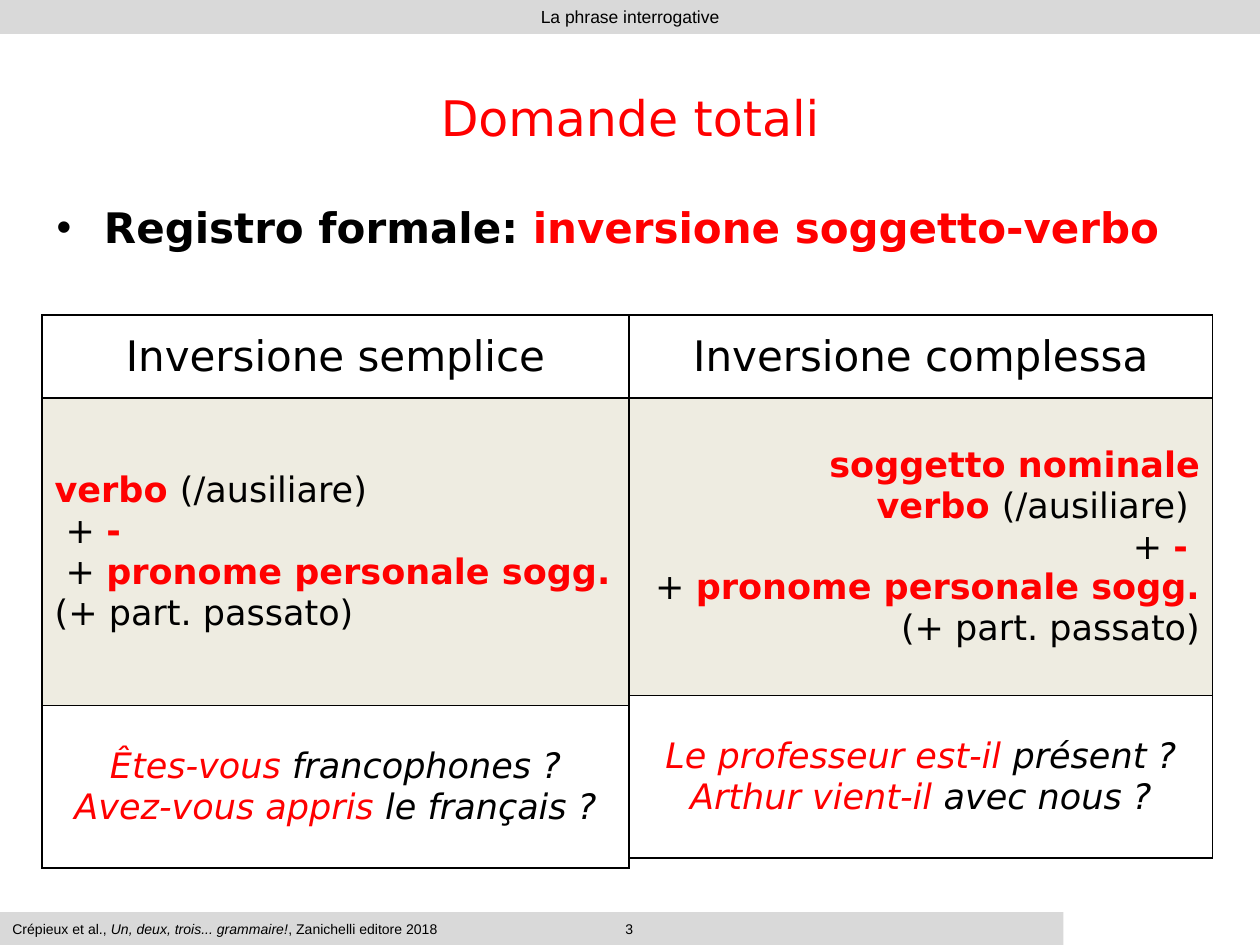
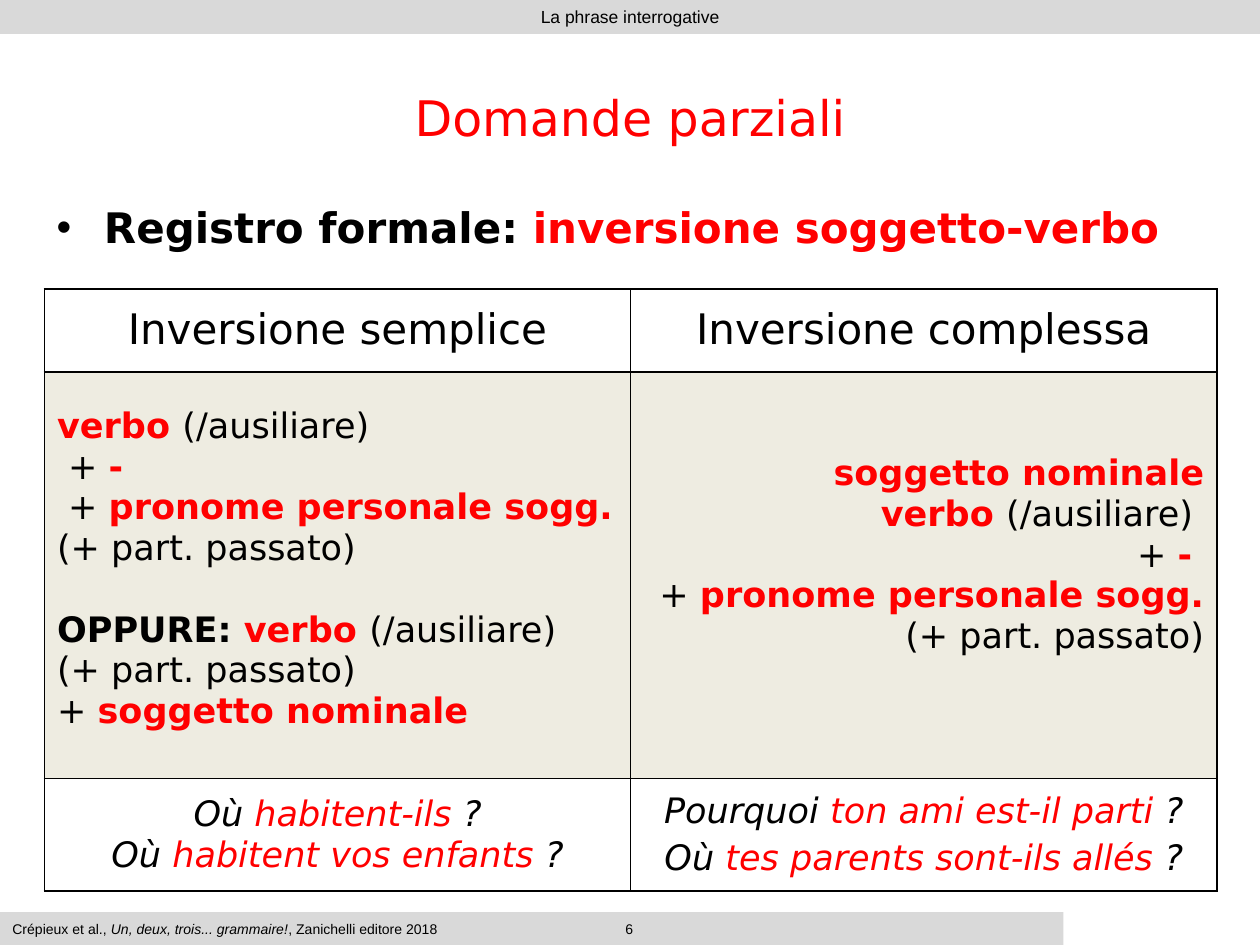
from dataclasses import dataclass
from typing import NamedTuple

from lxml.etree import SubElement
from pptx import Presentation
from pptx.dml.color import RGBColor
from pptx.enum.shapes import MSO_SHAPE
from pptx.enum.text import MSO_ANCHOR, MSO_AUTO_SIZE, PP_ALIGN
from pptx.oxml.ns import qn
from pptx.util import Pt

RED, BLACK, GREY, CREAM = "FF0000", "000000", "D9D9D9", "EEECE1"
SANS, BAND_FONT = "DejaVu Sans", "Arial"
LEFT, CENTER, RIGHT = PP_ALIGN.LEFT, PP_ALIGN.CENTER, PP_ALIGN.RIGHT
BLANK_LINE = 23.3


class Run(NamedTuple):
    text: str
    color: str | None = None
    bold: bool | None = None
    italic: bool | None = None


@dataclass
class Para:
    runs: list[Run]
    size: float
    align: PP_ALIGN = LEFT
    font: str = SANS
    color: str = BLACK
    bold: bool = False
    italic: bool = False
    before: float = 0


@dataclass
class Cell:
    paras: list[Para]
    fill: str | None = None
    anchor: MSO_ANCHOR = MSO_ANCHOR.MIDDLE
    space_below: float = 0


@dataclass
class Band:
    left: float
    top: float
    width: float
    height: float
    para: Para


@dataclass
class Grid:
    """A one-column table."""
    left: float
    top: float
    width: float
    heights: list[float]
    cells: list[Cell]


@dataclass
class Lesson:
    title: str
    number: str
    grids: list[Grid]


def rgb(color: str) -> RGBColor:
    return RGBColor.from_string(color)


def key(text: str) -> Run:
    return Run(text, RED, bold=True)


def red(text: str) -> Run:
    return Run(text, RED)


def header(text: str) -> Cell:
    return Cell([Para([Run(text)], 24, CENTER)])


def example(*runs: Run, before: float = 0) -> Para:
    return Para(list(runs), 20, CENTER, italic=True, before=before)


def fill_paragraph(p, para: Para) -> None:
    p.alignment = para.align
    p.space_before = Pt(para.before)
    f = p.font
    f.name, f.size = para.font, Pt(para.size)
    f.bold, f.italic = para.bold, para.italic
    f.color.rgb = rgb(para.color)
    for run in para.runs:
        for i, line in enumerate(run.text.split("\n")):
            if i:
                p.add_line_break()
            if not line:
                continue
            r = p.add_run()
            r.text = line
            if run.color:
                r.font.color.rgb = rgb(run.color)
            if run.bold is not None:
                r.font.bold = run.bold
            if run.italic is not None:
                r.font.italic = run.italic


def fill_frame(tf, paras: list[Para]) -> None:
    for i, para in enumerate(paras):
        fill_paragraph(tf.add_paragraph() if i else tf.paragraphs[0], para)


def place(sp, left: float, top: float, width: float, height: float) -> None:
    sp.left, sp.top, sp.width, sp.height = map(Pt, (left, top, width, height))


def draw_band(s, band: Band) -> None:
    sp = s.shapes.add_shape(MSO_SHAPE.RECTANGLE, Pt(band.left), Pt(band.top),
                            Pt(band.width), Pt(band.height))
    sp.shadow.inherit = False
    sp.fill.solid()
    sp.fill.fore_color.rgb = rgb(GREY)
    sp.line.fill.background()
    tf = sp.text_frame
    tf.word_wrap = True
    tf.margin_top = tf.margin_bottom = 0
    tf.vertical_anchor = MSO_ANCHOR.MIDDLE
    fill_frame(tf, [band.para])


def add_borders(cell) -> None:
    tc_pr = cell._tc.get_or_add_tcPr()
    for side in ("lnL", "lnR", "lnT", "lnB"):
        ln = SubElement(tc_pr, qn(f"a:{side}"), w=str(Pt(1)))
        solid = SubElement(ln, qn("a:solidFill"))
        SubElement(solid, qn("a:srgbClr"), val=BLACK)


def draw_grid(s, grid: Grid) -> None:
    table = s.shapes.add_table(len(grid.cells), 1, Pt(grid.left), Pt(grid.top),
                               Pt(grid.width), Pt(sum(grid.heights))).table
    table.first_row = table.horz_banding = False
    for row, height, content in zip(table.rows, grid.heights, grid.cells):
        row.height = Pt(height)
        cell = row.cells[0]
        add_borders(cell)
        if content.fill:
            cell.fill.solid()
            cell.fill.fore_color.rgb = rgb(content.fill)
        else:
            cell.fill.background()
        cell.vertical_anchor = content.anchor
        cell.margin_bottom = Pt(3.6 + content.space_below)
        fill_frame(cell.text_frame, content.paras)


def draw_lesson(prs, lesson: Lesson) -> None:
    s = prs.slides.add_slide(prs.slide_layouts[1])
    title, body = s.placeholders
    place(title, 36, 21.6, 648, 90)
    title.text_frame.vertical_anchor = MSO_ANCHOR.MIDDLE
    fill_frame(title.text_frame,
               [Para([Run(lesson.title)], 28, CENTER, color=RED)])

    place(body, 25.2, 111.6, 686.2, 385.2)
    tf = body.text_frame
    tf.auto_size = MSO_AUTO_SIZE.NONE
    p_pr = tf.paragraphs[0]._p.get_or_add_pPr()
    p_pr.set("marL", str(Pt(27)))
    p_pr.set("indent", str(-Pt(27)))
    fill_frame(tf, [Para([Run("Registro formale: "),
                          red("inversione soggetto-verbo")], 24, bold=True)])

    number = Para([Run(lesson.number)], 8, CENTER, BAND_FONT)
    for band in (TOP_BAND, SOURCE_BAND, Band(277.9, 521.3, 163.4, 18.7, number)):
        draw_band(s, band)
    for grid in lesson.grids:
        draw_grid(s, grid)


TOP_BAND = Band(0, 0, 720, 19.4, Para([Run("La phrase interrogative")],
                                      10, CENTER, BAND_FONT))
SOURCE_BAND = Band(0, 521.3, 607.7, 18.7, Para(
    [Run("Crépieux et al., "),
     Run("Un, deux, trois... grammaire!", italic=True),
     Run(", Zanichelli editore 2018")], 8, font=BAND_FONT))

AUXILIARY = [key("verbo "), Run("(/ausiliare) \n")]
PRONOUN = [Run(" + "), key("- \n"), Run(" + "),
           key("pronome personale sogg.\n"), Run("(+ part. passato)")]
SIMPLE_RULE = Para(AUXILIARY + PRONOUN, 20)
COMPLEX_RULE = Para([key("soggetto nominale\n")] + AUXILIARY + PRONOUN, 20, RIGHT)
OTHER_RULE = Para([Run("OPPURE: ", bold=True)] + AUXILIARY
                  + [Run("(+ part. passato)\n+ "), key("soggetto nominale")],
                  20, before=BLANK_LINE)
SIMPLE, COMPLEX = header("Inversione semplice"), header("Inversione complessa")
PARTIAL_ROWS = [47.5, 232.5, 64.1]

LESSONS = [
    Lesson("Domande totali", "3", [
        Grid(24, 180, 335.5, [47.5, 175.7, 92.9], [
            SIMPLE,
            Cell([SIMPLE_RULE], CREAM),
            Cell([example(red("Êtes-vous "), Run("francophones ?\n"),
                          red("Avez-vous appris "), Run("le français ?"))]),
        ]),
        Grid(359.5, 180, 333.5, [47.5, 170, 92.9], [
            COMPLEX,
            Cell([COMPLEX_RULE], CREAM),
            Cell([example(red("Le professeur est-il "), Run("présent ?")),
                  example(red("Arthur vient-il "), Run("avec nous ?"))]),
        ]),
    ]),
    Lesson("Domande parziali", "6", [
        Grid(25.4, 165, 335, PARTIAL_ROWS, [
            SIMPLE,
            Cell([SIMPLE_RULE, OTHER_RULE], CREAM, MSO_ANCHOR.BOTTOM, BLANK_LINE),
            Cell([example(Run("Où "), red("habitent-ils "), Run("?\nOù "),
                          red("habitent vos enfants "), Run("?"))]),
        ]),
        Grid(360.4, 165, 335, PARTIAL_ROWS, [
            COMPLEX,
            Cell([COMPLEX_RULE], CREAM, space_below=BLANK_LINE),
            Cell([example(Run("Pourquoi "), red("ton ami est-il parti"), Run(" ?")),
                  example(Run("Où "), red("tes parents sont-ils allés"),
                          Run(" ?"), before=4)]),
        ]),
    ]),
]


def main() -> None:
    prs = Presentation()
    prs.slide_width, prs.slide_height = Pt(720), Pt(540)
    for lesson in LESSONS:
        draw_lesson(prs, lesson)
    prs.save("out.pptx")


if __name__ == "__main__":
    main()
